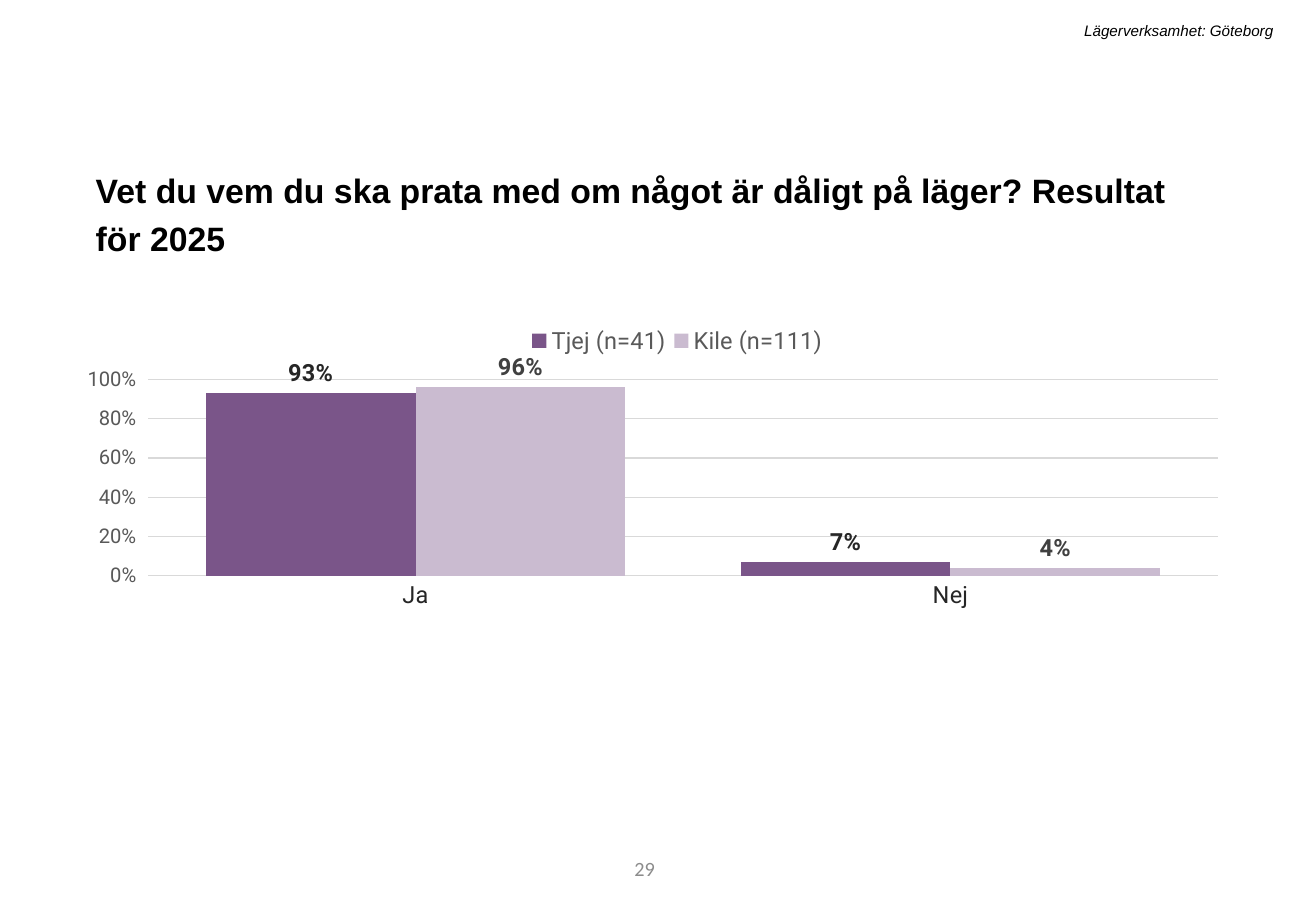
from dataclasses import dataclass

from lxml.etree import SubElement
from pptx import Presentation
from pptx.chart.data import CategoryChartData
from pptx.dml.color import RGBColor
from pptx.enum.chart import XL_CHART_TYPE, XL_LABEL_POSITION, XL_LEGEND_POSITION, XL_TICK_MARK
from pptx.enum.text import MSO_ANCHOR, PP_ALIGN
from pptx.oxml.ns import qn
from pptx.util import Pt

# Content
HEADER = "Lägerverksamhet: Göteborg"
QUESTION = "Vet du vem du ska prata med om något är dåligt på läger? Resultat för 2025"
PAGE_NUMBER = "29"
ANSWERS = ["Ja", "Nej"]
GROUPS = [
    # name, shares, bar colour, label colour
    ("Tjej (n=41)", (0.93, 0.07), "7A5589", "262626"),
    ("Kile (n=111)", (0.96, 0.04), "CABBD0", "404040"),
]


@dataclass(frozen=True)
class Theme:
    text_font: str = "Arial"
    chart_font: str = "Roboto"
    page_font: str = "Calibri"
    black: str = "000000"
    dark: str = "262626"
    medium: str = "595959"
    page_gray: str = "8C8C8C"
    grid: str = "D9D9D9"
    question_size: int = 20
    header_size: int = 9
    label_size: int = 14
    small_size: int = 12


THEME = Theme()

# Places in points: left, top, width, height
HEADER_BOX = (123.84, 9.36, 637.92, 18)
QUESTION_BOX = (49.68, 92.16, 676.8, 62.64)
CHART_BOX = (51.84, 182.16, 676.8, 284.4)
PAGE_BOX = (219.6, 500.4, 175.68, 28.8)

# Places as shares of the chart
PLOT_AREA = (0.05, 0.15, 0.94, 0.41)
LEGEND_AREA = (0.38, 0.03, 0.27, 0.08)


def points(box):
    return [Pt(value) for value in box]


def style(font, name, size, color, bold=False, italic=False):
    font.name, font.size = name, Pt(size)
    font.bold, font.italic = bold, italic
    font.color.rgb = RGBColor.from_string(color)


def add_text(slide, box, text, anchor=MSO_ANCHOR.TOP, align=PP_ALIGN.LEFT, **font):
    frame = slide.shapes.add_textbox(*points(box)).text_frame
    frame.word_wrap = True
    frame.vertical_anchor = anchor
    paragraph = frame.paragraphs[0]
    paragraph.text = text
    paragraph.alignment = align
    style(paragraph.font, **font)
    return paragraph


def set_layout(layout, area, inner=False):
    manual = SubElement(layout, qn("c:manualLayout"))
    settings = [("layoutTarget", "inner")] if inner else []
    settings += [("xMode", "edge"), ("yMode", "edge")]
    settings += zip("xywh", area)
    for tag, value in settings:
        SubElement(manual, qn(f"c:{tag}")).set("val", str(value))


def draw_line(line):
    line.width = Pt(0.75)
    line.color.rgb = RGBColor.from_string(THEME.grid)


def add_answer_chart(slide):
    data = CategoryChartData(number_format="0%")
    data.categories = ANSWERS
    for name, shares, *_ in GROUPS:
        data.add_series(name, shares)
    chart = slide.shapes.add_chart(
        XL_CHART_TYPE.COLUMN_CLUSTERED, *points(CHART_BOX), data
    ).chart
    chart.has_title = False
    style(chart.font, THEME.chart_font, 10, THEME.black)

    # Bars and their labels
    plot = chart.plots[0]
    plot.gap_width, plot.overlap = 55, 0
    plot.vary_by_categories = False
    for series, (_, _, bar_color, label_color) in zip(plot.series, GROUPS):
        series.format.fill.solid()
        series.format.fill.fore_color.rgb = RGBColor.from_string(bar_color)
        labels = series.data_labels
        labels.show_value = True
        labels.position = XL_LABEL_POSITION.OUTSIDE_END
        labels.number_format, labels.number_format_is_linked = "0%", False
        style(labels.font, THEME.chart_font, THEME.label_size, label_color, bold=True)

    # Axes
    answers = chart.category_axis
    answers.major_tick_mark = XL_TICK_MARK.NONE
    draw_line(answers.format.line)
    style(answers.tick_labels.font, THEME.chart_font, THEME.label_size, THEME.dark)
    shares = chart.value_axis
    shares.minimum_scale, shares.maximum_scale, shares.major_unit = 0, 1, 0.2
    shares.major_tick_mark = XL_TICK_MARK.OUTSIDE
    shares.format.line.fill.background()
    draw_line(shares.major_gridlines.format.line)
    shares.tick_labels.number_format = "0%"
    shares.tick_labels.number_format_is_linked = False
    style(shares.tick_labels.font, THEME.chart_font, THEME.small_size, THEME.medium)

    # Legend and plot placement
    chart.has_legend = True
    legend = chart.legend
    legend.position = XL_LEGEND_POSITION.TOP
    legend.include_in_layout = False
    style(legend.font, THEME.chart_font, THEME.label_size, THEME.medium)
    plot_area = chart.element.chart.plotArea
    for owner, area, inner in (
        (plot_area, PLOT_AREA, True),
        (legend.element if hasattr(legend, "element") else legend._element, LEGEND_AREA, False),
    ):
        layout = owner.find(qn("c:layout"))
        if layout is None:
            layout = owner.makeelement(qn("c:layout"), {})
            position = owner.find(qn("c:legendPos"))
            owner.insert(0 if position is None else owner.index(position) + 1, layout)
        set_layout(layout, area, inner)


def main():
    presentation = Presentation()
    presentation.slide_width, presentation.slide_height = Pt(780), Pt(540)
    slide = presentation.slides.add_slide(presentation.slide_layouts[6])

    # Page number
    add_text(slide, PAGE_BOX, PAGE_NUMBER, MSO_ANCHOR.MIDDLE, PP_ALIGN.RIGHT,
             name=THEME.page_font, size=THEME.small_size, color=THEME.page_gray)

    # Chart
    add_answer_chart(slide)

    # Question
    question = add_text(slide, QUESTION_BOX, QUESTION, name=THEME.text_font,
                        size=THEME.question_size, color=THEME.black, bold=True)
    question.line_spacing = 1.2
    question.space_before = Pt(10)

    # Header
    add_text(slide, HEADER_BOX, HEADER, align=PP_ALIGN.RIGHT, name=THEME.text_font,
             size=THEME.header_size, color=THEME.black, italic=True)

    presentation.save("out.pptx")


if __name__ == "__main__":
    main()
